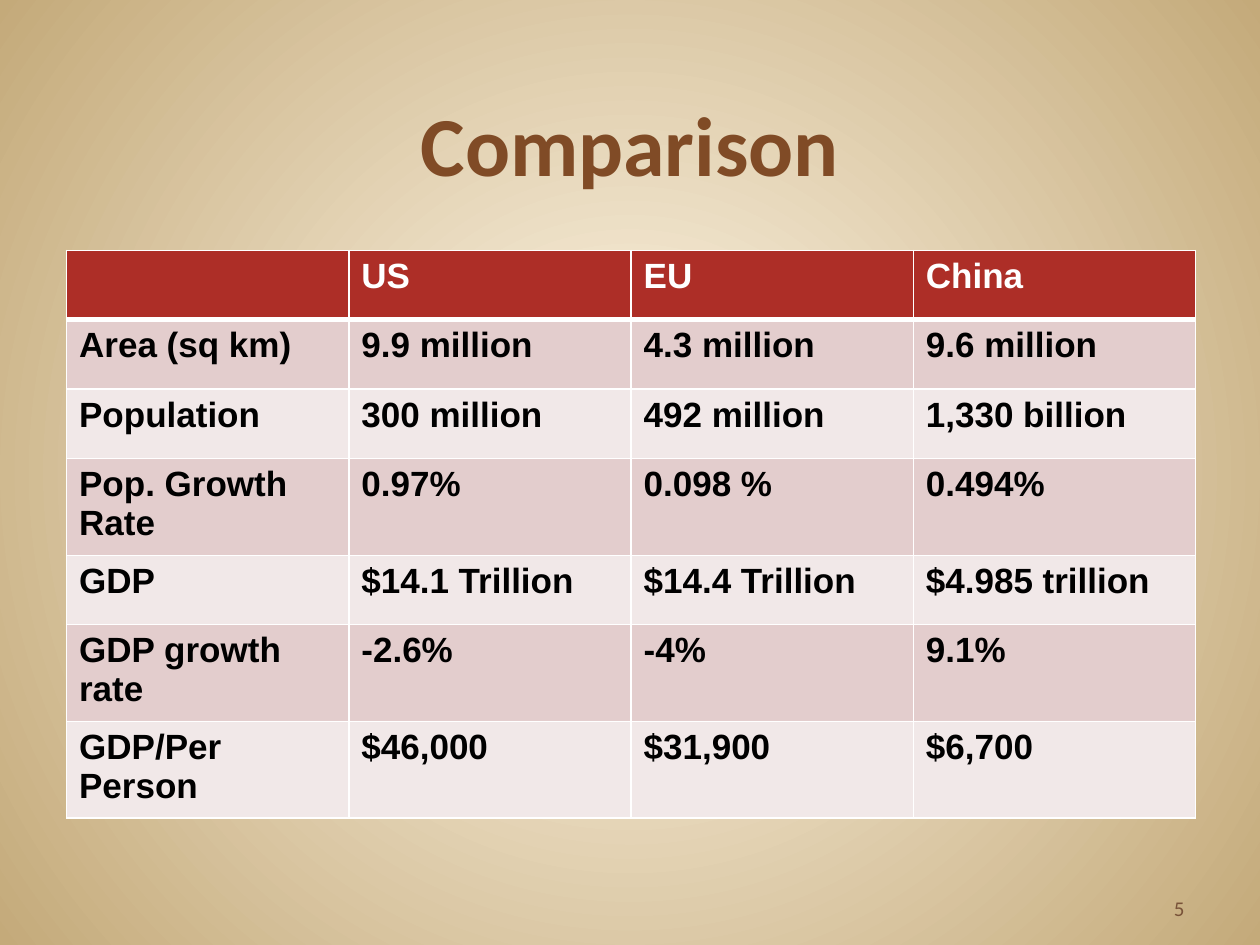
from dataclasses import dataclass

from lxml import etree
from pptx import Presentation
from pptx.dml.color import RGBColor
from pptx.enum.text import MSO_ANCHOR, PP_ALIGN
from pptx.oxml.ns import qn
from pptx.util import Pt

BOTTOM = MSO_ANCHOR.BOTTOM
CENTER, RIGHT = PP_ALIGN.CENTER, PP_ALIGN.RIGHT
TITLE_ONLY = 5


@dataclass(frozen=True)
class Theme:
    heading_font: str = "Calibri"
    table_font: str = "Arial"
    title_size: int = 48
    table_size: int = 20
    number_size: int = 12
    bg_inner: str = "FFF7E8"
    bg_outer: str = "C4AA7A"
    title: str = "804B26"
    number: str = "795339"
    header: str = "AD2E27"
    bands: tuple = ("E3CDCD", "F1E8E8")
    light: str = "FFFFFF"
    dark: str = "000000"


class SlideBuilder:
    def __init__(self, slide, theme):
        self.s = slide
        self.theme = theme

    def background(self):
        fill = self.s.background.fill
        fill.gradient()
        colors = (self.theme.bg_inner, self.theme.bg_outer)
        for stop, color, pos in zip(fill.gradient_stops, colors, (0, 1)):
            stop.color.rgb = RGBColor.from_string(color)
            stop.position = pos
        lin = next(self.s.element.iter(qn("a:lin")))
        grad = lin.getparent()
        grad.remove(lin)
        shade = etree.SubElement(grad, qn("a:path"), path="circle")
        sides = dict.fromkeys("ltrb", "50000")
        etree.SubElement(shade, qn("a:fillToRect"), **sides)

    def run(self, p, text, font, size, color, bold=False):
        r = p.add_run()
        r.text = text
        r.font.name = font
        r.font.size = Pt(size)
        r.font.bold = bold
        r.font.color.rgb = RGBColor.from_string(color)

    def title(self, text, x, y, w, h):
        t = self.theme
        sp = self.s.shapes.title
        sp.left, sp.top, sp.width, sp.height = Pt(x), Pt(y), Pt(w), Pt(h)
        tf = sp.text_frame
        tf.vertical_anchor = BOTTOM
        p = tf.paragraphs[0]
        p.alignment = CENTER
        self.run(p, text, t.heading_font, t.title_size, t.title, True)

    def slide_number(self, text, x, y, w, h):
        t = self.theme
        tf = self.s.shapes.add_textbox(Pt(x), Pt(y), Pt(w), Pt(h)).text_frame
        tf.word_wrap = True
        tf.vertical_anchor = BOTTOM
        p = tf.paragraphs[0]
        p.alignment = RIGHT
        self.run(p, text, t.heading_font, t.number_size, t.number)

    def borders(self, cell, widths):
        tc_pr = cell._tc.get_or_add_tcPr()
        for i, (side, width) in enumerate(widths.items()):
            ln = etree.Element(qn(f"a:ln{side}"), w=str(Pt(width)))
            fill = etree.SubElement(ln, qn("a:solidFill"))
            etree.SubElement(fill, qn("a:srgbClr"), val=self.theme.light)
            tc_pr.insert(i, ln)

    def table(self, rows, x, y, col_w, row_h):
        t = self.theme
        n_rows, n_cols = len(rows), len(rows[0])
        table = self.s.shapes.add_table(
            n_rows, n_cols, Pt(x), Pt(y), Pt(col_w * n_cols), Pt(row_h * n_rows)
        ).table
        for col in table.columns:
            col.width = Pt(col_w)
        for i, values in enumerate(rows):
            table.rows[i].height = Pt(row_h)
            fill = t.bands[(i - 1) % 2] if i else t.header
            color = t.dark if i else t.light
            widths = {"L": 1, "R": 1, "T": 3 if i == 1 else 1, "B": 1 if i else 3}
            for j, value in enumerate(values):
                cell = table.cell(i, j)
                cell.fill.solid()
                cell.fill.fore_color.rgb = RGBColor.from_string(fill)
                self.borders(cell, widths)
                if value:
                    p = cell.text_frame.paragraphs[0]
                    self.run(p, value, t.table_font, t.table_size, color, True)


COMPARISON = [
    ("", "US", "EU", "China"),
    ("Area (sq km)", "9.9 million", "4.3 million", "9.6 million"),
    ("Population", "300 million", "492 million", "1,330 billion"),
    ("Pop. Growth Rate", "0.97%", "0.098 %", "0.494%"),
    ("GDP", "$14.1 Trillion", "$14.4 Trillion", "$4.985 trillion"),
    ("GDP growth rate", "-2.6%", "-4%", "9.1%"),
    ("GDP/Per Person", "$46,000", "$31,900", "$6,700"),
]


def main():
    prs = Presentation()
    prs.slide_width, prs.slide_height = Pt(720), Pt(540)
    slide = prs.slides.add_slide(prs.slide_layouts[TITLE_ONLY])
    b = SlideBuilder(slide, Theme())
    b.background()
    b.title("Comparison", 36, 24, 648, 90)
    b.slide_number("5", 516, 492, 168, 37.5)
    b.table(COMPARISON, 38, 143, 161.3, 39.7)
    prs.save("out.pptx")


if __name__ == "__main__":
    main()
